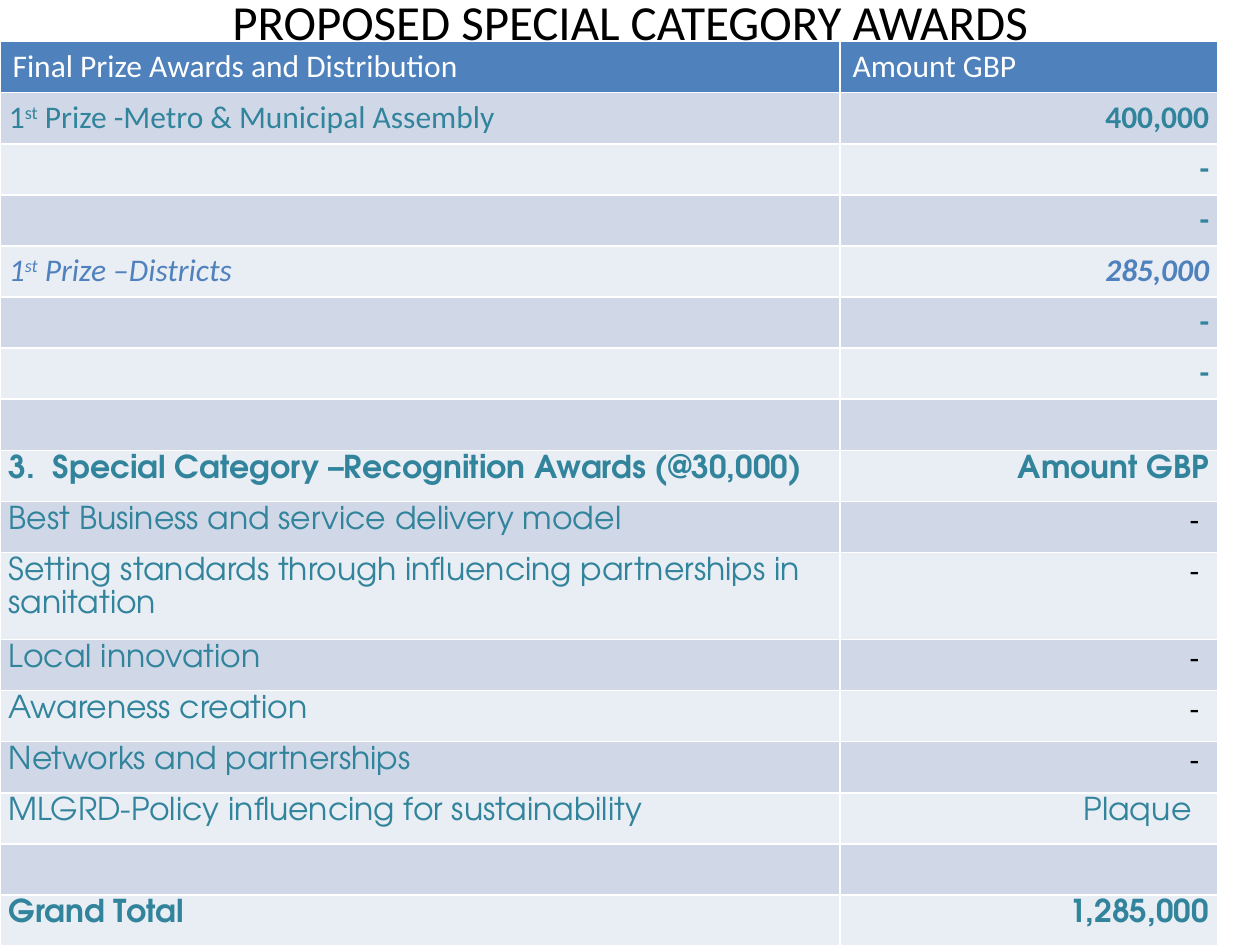
from lxml import etree
from pptx import Presentation
from pptx.dml.color import RGBColor
from pptx.enum.text import MSO_ANCHOR, PP_ALIGN
from pptx.oxml.ns import qn
from pptx.util import Inches, Pt

LEFT, MID, RIGHT = PP_ALIGN.LEFT, PP_ALIGN.CENTER, PP_ALIGN.RIGHT
CENTER = MSO_ANCHOR.MIDDLE
WHITE = RGBColor(0xFF, 0xFF, 0xFF)
BLACK = RGBColor(0, 0, 0)
BLUE = RGBColor(0x4F, 0x81, 0xBD)
TEAL = RGBColor(0x31, 0x84, 0x9B)
BANDS = RGBColor(0xE9, 0xED, 0xF4), RGBColor(0xD0, 0xD8, 0xE8)
SANS, ROUND = "Calibri", "TeX Gyre Adventor"

HEAD = dict(name=SANS, color=WHITE, space=1, inset=0.1, pad=0.05)
PLAIN = dict(name=SANS, color=TEAL)
BOLD = dict(PLAIN, bold=True)
SLANT = dict(PLAIN, color=BLUE, italic=True)
STRONG = dict(SLANT, bold=True)
ITEM = dict(name=ROUND, color=TEAL)
TOTAL = dict(ITEM, bold=True)
DASH = dict(name=SANS, color=BLACK, space=1, end=0.15)
PLAQUE = dict(ITEM, end=0.21)

EMPTY = ("", PLAIN, "", PLAIN)
NIL = ("", PLAIN, "-", BOLD)
AWARDS = [
    "Best Business and service delivery model",
    "Setting standards through influencing partnerships in sanitation",
    "Local innovation",
    "Awareness creation",
    "Networks and partnerships",
]
ROWS = [
    ("Final Prize Awards and Distribution", HEAD, "Amount GBP", HEAD),
    ("1^st^ Prize -Metro & Municipal Assembly", PLAIN, "400,000", BOLD),
    NIL,
    NIL,
    ("1^st^ Prize –Districts", SLANT, "285,000", STRONG),
    NIL,
    NIL,
    EMPTY,
    ("3.  Special Category –Recognition Awards (@30,000)", TOTAL, "Amount GBP", TOTAL),
    *[(award, ITEM, "-", DASH) for award in AWARDS],
    ("MLGRD-Policy influencing for sustainability", ITEM, "Plaque", PLAQUE),
    EMPTY,
    ("Grand Total", TOTAL, "1,285,000", TOTAL),
]


class Deck:
    """Holds the style and the current slide, with lengths as shares of its size."""

    def __init__(self, wide, high):
        self.file = Presentation()
        self.file.slide_width, self.file.slide_height = Inches(wide), Inches(high)
        self.wide, self.high = Inches(wide), Inches(high)
        self.slide = self.file.slides.add_slide(self.file.slide_layouts[6])

    def area(self, x, y, w, h):
        return [int(x * self.wide), int(y * self.high), int(w * self.wide), int(h * self.high)]

    def text(self, para, text, form, size=18, align=LEFT):
        para.alignment, para.line_spacing = align, form.get("space", 1.15)
        for i, part in enumerate(text.split("^")):
            run = para.add_run()
            run.text = part
            look = dict(size=Pt(size), bold=False, italic=False)
            look.update((k, form[k]) for k in ("name", "bold", "italic") if k in form)
            for key, value in look.items():
                setattr(run.font, key, value)
            run.font.color.rgb = form["color"]
            if i % 2:
                run.font._element.set("baseline", "30000")

    def title(self, text, x, y, w, h):
        frame = self.slide.shapes.add_textbox(*self.area(x, y, w, h)).text_frame
        look = dict(word_wrap=True, vertical_anchor=CENTER, margin_top=0, margin_bottom=0)
        for key, value in look.items():
            setattr(frame, key, value)
        self.text(frame.paragraphs[0], text, dict(name=SANS, color=BLACK, space=1), 28, MID)

    def edge(self, cell):
        props = cell._tc.get_or_add_tcPr()
        for side in ("a:lnL", "a:lnR", "a:lnT", "a:lnB"):
            line = etree.SubElement(props, qn(side), w=str(Pt(1)))
            fill = etree.SubElement(line, qn("a:solidFill"))
            etree.SubElement(fill, qn("a:srgbClr"), val=str(WHITE))

    def cell(self, cell, text, form, fill, align):
        self.edge(cell)
        cell.fill.solid()
        cell.fill.fore_color.rgb = fill
        if not text:
            return
        inset, pad = form.get("inset", 0.07), form.get("pad", 0)
        look = dict(margin_left=inset, margin_right=form.get("end", inset),
                    margin_top=pad, margin_bottom=pad)
        for key, value in look.items():
            setattr(cell, key, Inches(value))
        self.text(cell.text_frame.paragraphs[0], text, form, align=align)

    def table(self, rows, cols, x, y, h):
        place = self.area(x, y, sum(cols), h)
        table = self.slide.shapes.add_table(len(rows), len(cols), *place).table
        for col, share in zip(table.columns, cols):
            col.width = int(share * self.wide)
        for i, (name, form, sum_, look) in enumerate(rows):
            fill = BANDS[i % 2] if i else BLUE
            self.cell(table.cell(i, 0), name, form, fill, LEFT)
            self.cell(table.cell(i, 1), sum_, look, fill, RIGHT if i else LEFT)


def main():
    deck = Deck(10, 7.5)
    deck.title("PROPOSED SPECIAL CATEGORY AWARDS", 0.05, 0, 0.9, 0.33 / 7.5)
    deck.table(ROWS, (2 / 3, 0.3), 0, 0.33 / 7.5, 0.92)
    deck.file.save("out.pptx")


if __name__ == "__main__":
    main()
